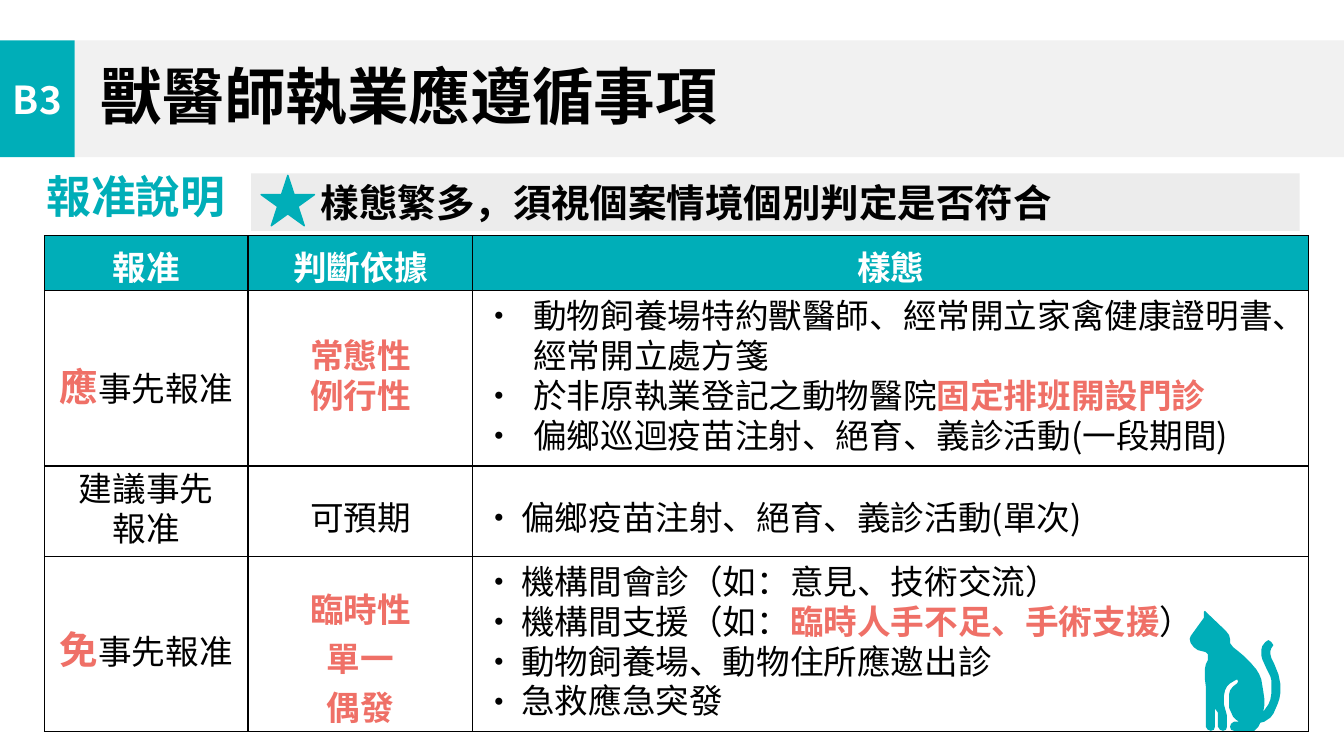
from lxml.etree import SubElement
from pptx import Presentation
from pptx.dml.color import RGBColor
from pptx.enum.shapes import MSO_SHAPE as Shape
from pptx.enum.text import MSO_ANCHOR as Anchor, MSO_AUTO_SIZE as AutoSize, PP_ALIGN as Align
from pptx.oxml import parse_xml
from pptx.oxml.ns import nsdecls, qn
from pptx.util import Inches, Pt

FONT = "Noto Sans CJK TC"
COLORS = {"teal": "00AEB8", "coral": "EF7067", "black": "000000",
          "white": "FFFFFF", "band": "F1F1F1", "note": "ECECEC"}
STYLES = {
    "title": (44, True, "black"),
    "badge": (27.5, True, "white"),
    "label": (32, True, "teal"),
    "note": (27.5, True, "black"),
    "head": (24, True, "white"),
    "body": (24, False, "black"),
    "key": (24, True, "coral"),
    "lead": (27.5, True, "coral"),
}

COLUMNS = [2.02, 2.23, 8.29]
ROWS = [0.54, 1.74, 0.9, 1.73]
LINE = 28.5
HEADERS = ["報准", "判斷依據", "樣態"]
BODY = [
    [
        {"lines": [[("應", "lead"), ("事先報准", "body")]], "top": 0.12},
        {"lines": [[("常態性", "key")], [("例行性", "key")]], "spacing": LINE},
        {"lines": [
            [("動物飼養場特約獸醫師、經常開立家禽健康證明書、經常開立處方箋", "body")],
            [("於非原執業登記之動物醫院", "body"), ("固定排班開設門診", "key")],
            [("偏鄉巡迴疫苗注射、絕育、義診活動(一段期間)", "body")],
        ], "spacing": LINE, "bullet": (0.6, 0.5)},
    ],
    [
        {"lines": [[("建議事先", "body")], [("報准", "body")]], "spacing": LINE},
        {"lines": [[("可預期", "body")]], "top": 0.08},
        {"lines": [[("偏鄉疫苗注射、絕育、義診活動(單次)", "body")]],
         "top": 0.08, "bullet": (0.48, 0.38)},
    ],
    [
        {"lines": [[("免", "lead"), ("事先報准", "body")]], "top": 0.08},
        {"lines": [[("臨時性", "key")], [("單一", "key")], [("偶發", "key")]], "top": 0.26},
        {"lines": [
            [("機構間會診（如：意見、技術交流）", "body")],
            [("機構間支援（如：", "body"), ("臨時人手不足、手術支援", "key"), ("）", "body")],
            [("動物飼養場、動物住所應邀出診", "body")],
            [("急救應急突發", "body")],
        ], "spacing": LINE, "bullet": (0.48, 0.38)},
    ],
]

CAT = [
    (15, 0), (36, 20), (39, 24), (40, 28), (40, 32), (43, 36), (48, 40), (54, 45),
    (60, 51), (66, 58), (69, 63), (71, 68), (73, 80), (74, 87), (74, 94), (73, 100),
    (78, 93), (80, 88), (81, 82), (81, 69), (80, 65), (76, 57), (72, 48), (71, 44),
    (71, 39), (72, 35), (75, 31), (78, 29), (81, 31), (83, 34), (81, 37), (80, 40),
    (80, 43), (81, 47), (84, 53), (88, 63), (90, 73), (90, 81), (89, 87), (87, 93),
    (83, 102), (80, 106), (74, 110), (70, 111), (68, 115), (64, 119), (44, 119),
    (41, 118), (40, 115), (41, 112), (44, 110), (49, 110), (46, 108), (43, 105),
    (39, 96), (39, 83), (40, 79), (43, 75), (47, 72), (48, 70), (47, 68), (45, 69),
    (40, 72), (37, 75), (35, 79), (34, 84), (34, 93), (37, 104), (37, 115), (36, 118),
    (33, 119), (30, 118), (28, 115), (28, 101), (25, 97), (25, 115), (24, 118),
    (21, 119), (18, 118), (16, 115), (16, 75), (15, 67), (15, 58), (16, 53), (18, 49),
    (18, 43), (16, 41), (8, 39), (4, 36), (1, 32), (0, 28), (1, 25), (14, 7), (14, 1),
]


def color(name):
    return RGBColor.from_string(COLORS[name])


def write_line(para, runs):
    for text, style in runs:
        size, bold, ink = STYLES[style]
        span = para.add_run()
        span.text = text
        for key, value in {"size": Pt(size), "bold": bold, "name": FONT}.items():
            setattr(span.font, key, value)
        span.font.color.rgb = color(ink)
        SubElement(span.font._element, qn("a:ea")).set("typeface", FONT)


def write_frame(frame, text, style, align=Align.LEFT, left=0.0, anchor=Anchor.MIDDLE):
    settings = {"margin_left": Inches(left), "margin_right": 0, "margin_top": 0,
                "margin_bottom": 0, "word_wrap": True, "auto_size": AutoSize.NONE,
                "vertical_anchor": anchor}
    for key, value in settings.items():
        setattr(frame, key, value)
    para = frame.paragraphs[0]
    para.alignment = align
    write_line(para, [(text, style)])


def paint(shape, fill):
    shape.shadow.inherit = False
    shape.fill.solid()
    shape.fill.fore_color.rgb = color(fill)
    shape.line.fill.background()
    return shape


def add_block(page, kind, box, fill):
    return paint(page.shapes.add_shape(kind, *map(Inches, box)), fill)


def add_header(page, box):
    left, top, width, height = box
    badge_width = 0.74
    add_block(page, Shape.RECTANGLE,
              (left + badge_width, top, width - badge_width, height), "band")
    badge = add_block(page, Shape.RECTANGLE, (left, top, badge_width, height), "badge_fill"
                      if "badge_fill" in COLORS else "teal")
    write_frame(badge.text_frame, "B3", "badge", Align.CENTER)
    title = page.shapes.title
    page.shapes._spTree.append(title._element)
    place = {"left": left + 1, "top": top + 0.17, "width": 6.4, "height": 0.9}
    for key, value in place.items():
        setattr(title, key, Inches(value))
    write_frame(title.text_frame, "獸醫師執業應遵循事項", "title", anchor=Anchor.TOP)


def add_note_row(page, box):
    left, top, width, height = box
    label = page.shapes.add_textbox(*map(Inches, (left, top - 0.05, 1.9, 0.66)))
    write_frame(label.text_frame, "報准說明", "label", anchor=Anchor.TOP)
    bar_left = left + 2.03
    note = add_block(page, Shape.RECTANGLE, (bar_left, top, width - 2.03, height), "note")
    write_frame(note.text_frame, "樣態繁多，須視個案情境個別判定是否符合", "note", left=0.69)
    star = add_block(page, Shape.STAR_5_POINT, (bar_left + 0.1, top + 0.02, 0.53, 0.5), "teal")
    star.line.color.rgb = color("teal")
    star.line.width = Pt(1)


def add_borders(cell):
    props = cell._tc.get_or_add_tcPr()
    for index, side in enumerate(("lnL", "lnR", "lnT", "lnB")):
        props.insert(index, parse_xml(
            f'<a:{side} {nsdecls("a")} w="12700"><a:solidFill>'
            f'<a:srgbClr val="{COLORS["black"]}"/></a:solidFill></a:{side}>'))


def add_bullet(para, indent, hang):
    props = para._p.get_or_add_pPr()
    props.set("marL", str(Inches(indent)))
    props.set("indent", str(-Inches(hang)))
    SubElement(props, qn("a:buFont")).set("typeface", FONT)
    SubElement(props, qn("a:buChar")).set("char", "•")


def fill_cell(cell, content, fill=None):
    settings = {"margin_left": 0, "margin_right": 0, "margin_bottom": 0,
                "margin_top": Inches(content.get("top", 0)),
                "vertical_anchor": Anchor.MIDDLE}
    for key, value in settings.items():
        setattr(cell, key, value)
    if fill:
        cell.fill.solid()
        cell.fill.fore_color.rgb = color(fill)
    else:
        cell.fill.background()
    add_borders(cell)
    frame = cell.text_frame
    for index, runs in enumerate(content["lines"]):
        para = frame.add_paragraph() if index else frame.paragraphs[0]
        para.alignment = Align.LEFT if "bullet" in content else Align.CENTER
        if "spacing" in content:
            para.line_spacing = Pt(content["spacing"])
        if "bullet" in content:
            add_bullet(para, *content["bullet"])
        write_line(para, runs)


def add_rules_table(page, box):
    table = page.shapes.add_table(len(ROWS), len(COLUMNS), *map(Inches, box)).table
    for flag in ("first_row", "horz_banding"):
        setattr(table, flag, False)
    for column, width in zip(table.columns, COLUMNS):
        column.width = Inches(width)
    for row, height in zip(table.rows, ROWS):
        row.height = Inches(height)
    for index, text in enumerate(HEADERS):
        fill_cell(table.cell(0, index), {"lines": [[(text, "head")]], "top": 0.06}, "teal")
    for row, contents in enumerate(BODY, 1):
        for column, content in enumerate(contents):
            fill_cell(table.cell(row, column), content)


def add_cat(page, left, top):
    outline = page.shapes.build_freeform(*CAT[0], scale=Inches(0.01))
    outline.add_line_segments(CAT[1:], close=True)
    paint(outline.convert_to_shape(Inches(left), Inches(top)), "teal")


def main():
    deck = Presentation()
    deck.slide_width, deck.slide_height = Inches(13.33), Inches(7.5)
    page = deck.slides.add_slide(deck.slide_layouts[5])
    add_rules_table(page, (0.44, 2.34, sum(COLUMNS), sum(ROWS)))
    add_note_row(page, (0.46, 1.72, 12.43, 0.57))
    add_header(page, (0, 0.4, 13.33, 1.16))
    add_cat(page, 11.8, 6.06)
    deck.save("out.pptx")


if __name__ == "__main__":
    main()
